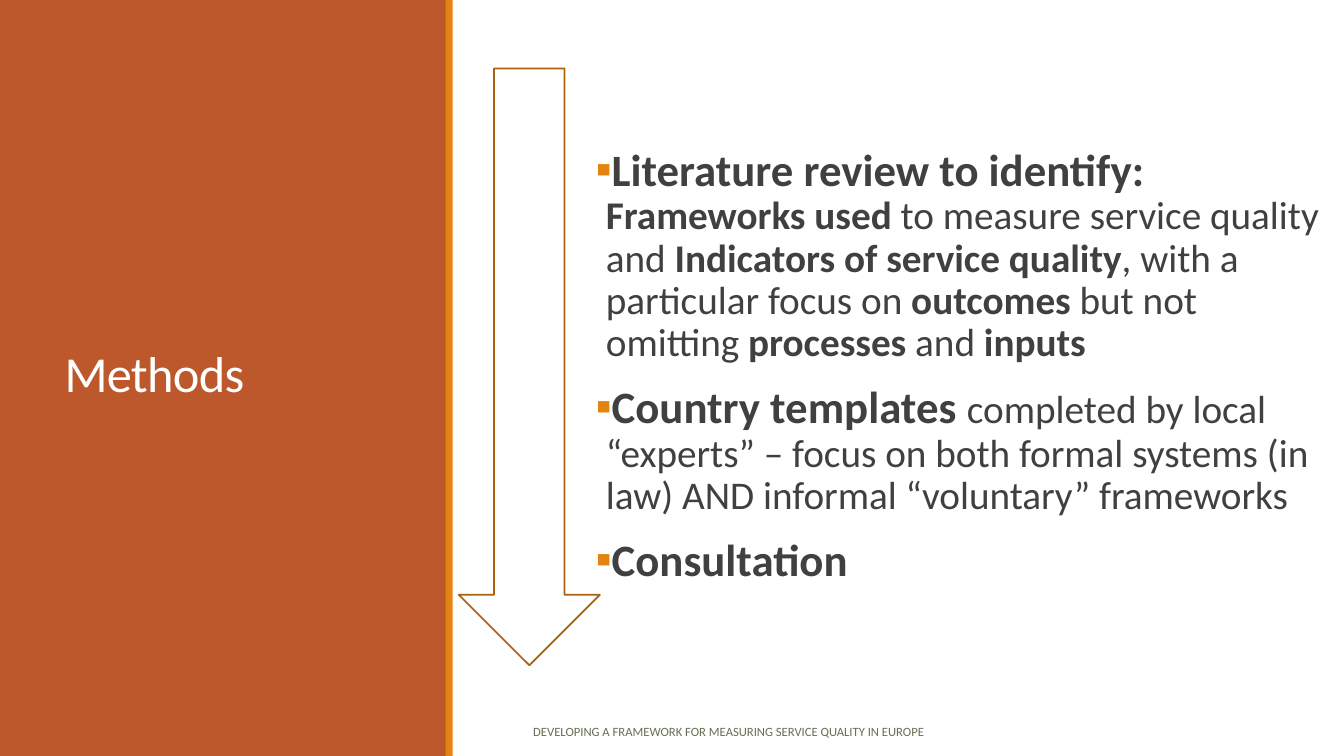
from lxml import etree
from pptx import Presentation
from pptx.dml.color import RGBColor
from pptx.enum.shapes import MSO_SHAPE
from pptx.enum.text import MSO_ANCHOR, MSO_AUTO_SIZE, PP_ALIGN
from pptx.oxml.ns import qn
from pptx.util import Inches, Pt

RECTANGLE = MSO_SHAPE.RECTANGLE
DOWN_ARROW = MSO_SHAPE.DOWN_ARROW
MIDDLE = MSO_ANCHOR.MIDDLE
NO_AUTOFIT = MSO_AUTO_SIZE.NONE
LEFT = PP_ALIGN.LEFT

RUST, ORANGE, BROWN = "BD582C", "E48312", "A9610D"
WHITE, CHARCOAL, OLIVE = "FFFFFF", "404040", "637052"
FONT = "Calibri"

METHODS = [
    [("Literature review to identify: ", 32, True),
     ("Frameworks used ", 28, True),
     ("to measure service quality and ", 28, False),
     ("Indicators of service quality", 28, True),
     (", with a particular focus on ", 28, False),
     ("outcomes", 28, True),
     (" but not omitting ", 28, False),
     ("processes", 28, True),
     (" and ", 28, False),
     ("inputs", 28, True)],
    [("Country templates ", 32, True),
     ("completed by local “experts” – focus on both formal systems (in law) "
      "AND informal “voluntary” frameworks", 28, False)],
    [("Consultation", 32, True)],
]


def color(hex_value):
    return RGBColor.from_string(hex_value)


def apply(target, values):
    for name, value in values.items():
        setattr(target, name, value)


def place(shape, box):
    names = ("left", "top", "width", "height")
    apply(shape, dict(zip(names, map(Inches, box))))


def set_frame(frame, inset_x=0.1):
    apply(frame, {
        "word_wrap": True, "auto_size": NO_AUTOFIT, "vertical_anchor": MIDDLE,
        "margin_left": Inches(inset_x), "margin_right": Inches(inset_x),
        "margin_top": Inches(0.05), "margin_bottom": Inches(0.05),
    })


def add_run(paragraph, text, size, hex_value, bold=False):
    run = paragraph.add_run()
    run.text = text
    apply(run.font, {"name": FONT, "size": Pt(size), "bold": bold})
    run.font.color.rgb = color(hex_value)
    return run


def add_bullet(paragraph):
    properties = paragraph._p.get_or_add_pPr()
    for name, value in {"marL": 0.1, "indent": -0.1}.items():
        properties.set(name, str(Inches(value)))
    bullet_color = etree.SubElement(properties, qn("a:buClr"))
    etree.SubElement(bullet_color, qn("a:srgbClr")).set("val", ORANGE)
    etree.SubElement(properties, qn("a:buFont")).set("typeface", FONT)
    etree.SubElement(properties, qn("a:buChar")).set("char", "▪")


def add_band(slide, box, hex_value):
    band = slide.shapes.add_shape(RECTANGLE, *map(Inches, box))
    band.shadow.inherit = False
    band.fill.solid()
    band.fill.fore_color.rgb = color(hex_value)
    band.line.fill.background()
    return band


def add_title_panel(slide, box):
    left, top, width, height = box
    panel = add_band(slide, box, RUST)
    stripe = add_band(slide, (left + width - 0.01, top, 0.07, height), ORANGE)
    title = slide.shapes.title
    for background in (stripe, panel):
        title._element.getparent().insert(2, background._element)
    place(title, (left + 0.54, top + 0.66, 3.37, 6.17))
    set_frame(title.text_frame)
    paragraph = title.text_frame.paragraphs[0]
    apply(paragraph, {"alignment": LEFT, "line_spacing": 0.85})
    heading = add_run(paragraph, "Methods", 36, WHITE)
    heading.font._element.set("spc", "-50")


def add_methods(slide, box):
    body = slide.placeholders[1]
    place(body, box)
    frame = body.text_frame
    set_frame(frame, 0)
    for index, method in enumerate(METHODS):
        paragraph = frame.add_paragraph() if index else frame.paragraphs[0]
        apply(paragraph, {
            "alignment": LEFT, "line_spacing": 0.9,
            "space_before": Pt(12), "space_after": Pt(2),
        })
        add_bullet(paragraph)
        for text, size, bold in method:
            add_run(paragraph, text, size, CHARCOAL, bold)


def add_footer(slide, box):
    footer = slide.shapes.add_textbox(*map(Inches, box))
    set_frame(footer.text_frame)
    paragraph = footer.text_frame.paragraphs[0]
    paragraph.space_after = Pt(6)
    add_run(paragraph,
            "DEVELOPING A FRAMEWORK FOR MEASURING SERVICE QUALITY IN EUROPE",
            9, OLIVE)


def add_progress_arrow(slide, box):
    arrow = slide.shapes.add_shape(DOWN_ARROW, *map(Inches, box))
    arrow.shadow.inherit = False
    arrow.fill.background()
    arrow.line.color.rgb = color(BROWN)
    arrow.line.width = Pt(1.25)


def main():
    presentation = Presentation()
    apply(presentation, {"slide_width": Inches(13.33),
                         "slide_height": Inches(7.5)})
    slide = presentation.slides.add_slide(presentation.slide_layouts[1])
    add_title_panel(slide, (0, 0, 4.43, 7.5))
    add_methods(slide, (5.91, 0.68, 7.18, 5.92))
    add_footer(slide, (5.19, 7.06, 5.58, 0.4))
    add_progress_arrow(slide, (4.55, 0.68, 1.4, 5.92))
    presentation.save("out.pptx")


if __name__ == "__main__":
    main()
